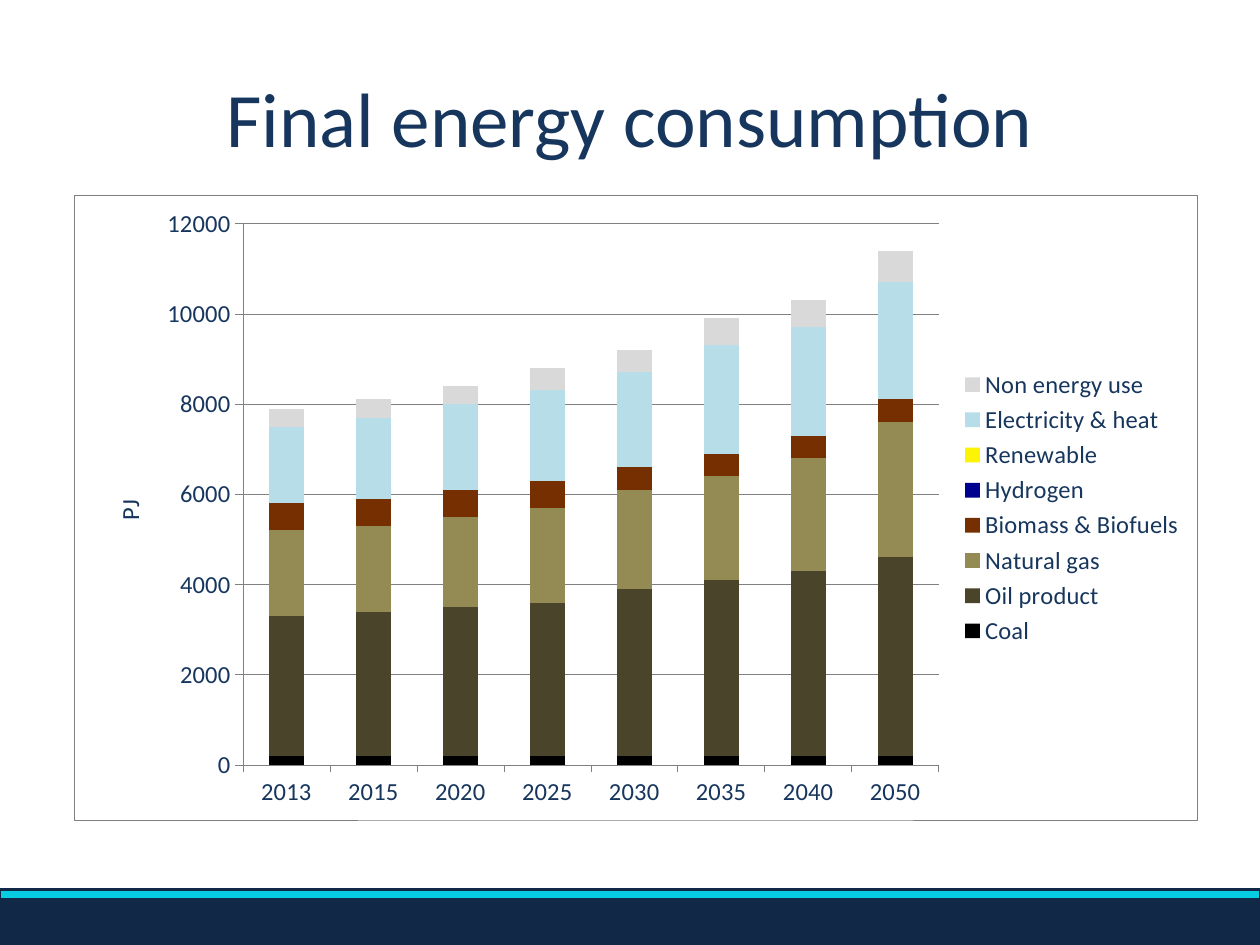
from lxml import etree
from pptx import Presentation
from pptx.chart.data import CategoryChartData
from pptx.dml.color import RGBColor
from pptx.enum.chart import XL_CHART_TYPE as ChartType, XL_LEGEND_POSITION as LegendPos
from pptx.enum.chart import XL_TICK_MARK as Tick
from pptx.enum.shapes import MSO_SHAPE as Shape
from pptx.enum.text import MSO_ANCHOR as Anchor, PP_ALIGN as Align
from pptx.oxml import parse_xml
from pptx.oxml.ns import nsdecls, qn
from pptx.util import Inches, Pt

FONT = "Calibri"
TEXT = RGBColor(0x17, 0x36, 0x5D)
NAVY = RGBColor(0x11, 0x28, 0x46)
CYAN = RGBColor(0x06, 0xCD, 0xE2)
GRAY = RGBColor(0x80, 0x80, 0x80)
WHITE = RGBColor(0xFF, 0xFF, 0xFF)

YEARS = ["2013", "2015", "2020", "2025", "2030", "2035", "2040", "2050"]
SERIES = [
    ("Coal", RGBColor(0x00, 0x00, 0x00), [200] * 8),
    ("Oil product", RGBColor(0x4A, 0x45, 0x2A),
     [3100, 3200, 3300, 3400, 3700, 3900, 4100, 4400]),
    ("Natural gas", RGBColor(0x94, 0x8A, 0x54),
     [1900, 1900, 2000, 2100, 2200, 2300, 2500, 3000]),
    ("Biomass & Biofuels", RGBColor(0x76, 0x2F, 0x00),
     [600, 600, 600, 600, 500, 500, 500, 500]),
    ("Hydrogen", RGBColor(0x00, 0x00, 0x90), [0] * 8),
    ("Renewable", RGBColor(0xFC, 0xF3, 0x05), [0] * 8),
    ("Electricity & heat", RGBColor(0xB7, 0xDE, 0xE8),
     [1700, 1800, 1900, 2000, 2100, 2400, 2400, 2600]),
    ("Non energy use", RGBColor(0xD9, 0xD9, 0xD9),
     [400, 400, 400, 500, 500, 600, 600, 700]),
]


def style_font(font, size):
    font.name = FONT
    font.size = Pt(size)
    font.bold = False
    font.color.rgb = TEXT


def style_line(line, color, width):
    line.color.rgb = color
    line.width = Pt(width)


def add_title(s, x, y, w, h):
    tf = s.shapes.add_textbox(Inches(x), Inches(y), Inches(w), Inches(h)).text_frame
    tf.word_wrap = True
    tf.vertical_anchor = Anchor.MIDDLE
    p = tf.paragraphs[0]
    p.text = "Final energy consumption"
    p.alignment = Align.CENTER
    style_font(p.font, 44)


def add_footer(s, x, y, w, h):
    stripe = 0.08
    bands = [(y, stripe, CYAN, 1.5), (y + stripe, h - stripe, NAVY, 1)]
    for top, height, color, width in bands:
        sp = s.shapes.add_shape(Shape.RECTANGLE, Inches(x), Inches(top),
                                Inches(w), Inches(height))
        sp.shadow.inherit = False
        sp.fill.solid()
        sp.fill.fore_color.rgb = color
        style_line(sp.line, NAVY, width)


def set_layout(parent, **places):
    for old in parent.findall(qn("c:layout")):
        parent.remove(old)
    layout = parse_xml(f"<c:layout {nsdecls('c')}><c:manualLayout/></c:layout>")
    for tag, val in places.items():
        etree.SubElement(layout[0], qn(f"c:{tag}")).set("val", str(val))
    return layout


def area_format(border=""):
    return parse_xml(
        f"<c:spPr {nsdecls('c', 'a')}><a:solidFill><a:srgbClr val='{WHITE}'/>"
        f"</a:solidFill>{border}</c:spPr>")


def format_areas(chart):
    space = chart.element.find(qn("c:chart"))
    plot_area = space.find(qn("c:plotArea"))
    plot_area.insert(0, set_layout(
        plot_area, layoutTarget="inner", xMode="edge", yMode="edge",
        x=0.15, y=0.045, w=0.62, h=0.867))
    plot_area.append(area_format())
    space.addnext(area_format(
        f"<a:ln w='{Pt(0.25)}'><a:solidFill><a:srgbClr val='{GRAY}'/>"
        "</a:solidFill></a:ln>"))


def add_energy_chart(s, x, y, w, h):
    data = CategoryChartData()
    data.categories = YEARS
    for name, _, values in SERIES:
        data.add_series(name, values)
    chart = s.shapes.add_chart(ChartType.COLUMN_STACKED, Inches(x), Inches(y),
                               Inches(w), Inches(h), data).chart
    style_font(chart.font, 14)
    chart.has_title = False
    chart.has_legend = True
    chart.legend.position = LegendPos.RIGHT
    chart.legend.include_in_layout = False

    plot = chart.plots[0]
    plot.gap_width = 150
    plot.overlap = 100
    plot.vary_by_categories = False
    for series, (_, color, _) in zip(plot.series, SERIES):
        series.format.fill.solid()
        series.format.fill.fore_color.rgb = color

    for axis in (chart.category_axis, chart.value_axis):
        axis.major_tick_mark = Tick.OUTSIDE
        axis.minor_tick_mark = Tick.NONE
        style_line(axis.format.line, GRAY, 0.25)

    axis = chart.value_axis
    axis.minimum_scale = 0
    axis.maximum_scale = 12000
    axis.major_unit = 2000
    axis.has_major_gridlines = True
    style_line(axis.major_gridlines.format.line, GRAY, 0.25)
    title = axis.axis_title
    p = title.text_frame.paragraphs[0]
    p.text = "PJ"
    style_font(p.font, 14)
    layout = set_layout(title.element if hasattr(title, "element") else title._element,
                        xMode="edge", yMode="edge", x=0.03, y=0.48)
    title._element.find(qn("c:tx")).addnext(layout)
    format_areas(chart)


def main():
    prs = Presentation()
    prs.slide_width = Inches(10)
    prs.slide_height = Inches(7.5)
    s = prs.slides.add_slide(prs.slide_layouts[6])
    add_title(s, 0.5, 0.3, 9, 1.25)
    add_footer(s, 0, 7.06, 10, 0.44)
    add_energy_chart(s, 0.59, 1.55, 8.91, 4.96)
    prs.save("out.pptx")


if __name__ == "__main__":
    main()
